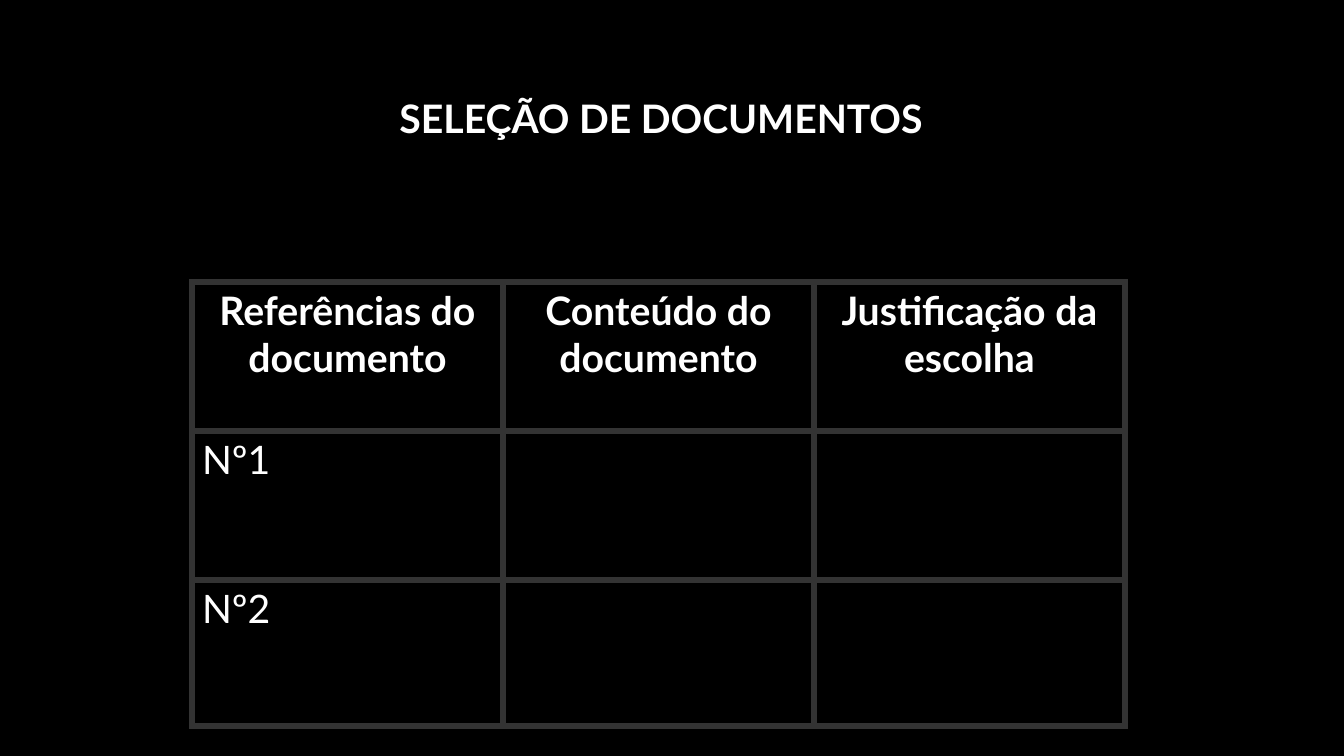
from dataclasses import dataclass

from lxml.etree import SubElement
from pptx import Presentation
from pptx.dml.color import RGBColor
from pptx.enum.text import MSO_ANCHOR, PP_ALIGN
from pptx.oxml.ns import qn
from pptx.util import Emu, Pt

TITLE = "SELEÇÃO DE DOCUMENTOS"
HEADERS = ["Referências do documento", "Conteúdo do documento", "Justificação da escolha"]
ROWS = [["Nº1", "", ""], ["Nº2", "", ""]]

SLIDE_SIZE = (1344, 756)
TITLE_BOX = (0, 85, 1322, 62)
TABLE_ORIGIN = (192, 282)
COLUMN_WIDTH = 311
ROW_HEIGHTS = [149, 149, 146]


@dataclass(frozen=True)
class Theme:
    background: str = "000000"
    text: str = "FFFFFF"
    border: str = "333333"
    border_width: float = 4.5
    font: str = "Lato"
    size: int = 28


THEME = Theme()


def px(n):
    return Emu(round(n * 914400 / 100.8))


def write(p, text, bold, align):
    p.alignment = align
    r = p.add_run()
    r.text = text
    r.font.name = THEME.font
    r.font.size = Pt(THEME.size)
    r.font.bold = bold
    r.font.color.rgb = RGBColor.from_string(THEME.text)


def set_borders(cell):
    tc_pr = cell._tc.get_or_add_tcPr()
    for i, side in enumerate(("lnL", "lnR", "lnT", "lnB")):
        ln = SubElement(tc_pr, qn(f"a:{side}"), w=str(Pt(THEME.border_width)))
        fill = SubElement(ln, qn("a:solidFill"))
        SubElement(fill, qn("a:srgbClr"), val=THEME.border)
        tc_pr.remove(ln)
        tc_pr.insert(i, ln)


def add_title(s):
    title = s.shapes.title
    title.left, title.top, title.width, title.height = map(px, TITLE_BOX)
    tf = title.text_frame
    tf.word_wrap = True
    tf.vertical_anchor = MSO_ANCHOR.BOTTOM
    p = tf.paragraphs[0]
    p.line_spacing = 0.9
    write(p, TITLE, True, PP_ALIGN.CENTER)


def add_documents_table(s):
    grid = [HEADERS, *ROWS]
    width, height = COLUMN_WIDTH * len(HEADERS), sum(ROW_HEIGHTS)
    box = map(px, (*TABLE_ORIGIN, width, height))
    table = s.shapes.add_table(len(grid), len(HEADERS), *box).table
    table.horz_banding = False
    for column in table.columns:
        column.width = px(COLUMN_WIDTH)
    for i, (texts, row_height) in enumerate(zip(grid, ROW_HEIGHTS)):
        table.rows[i].height = px(row_height)
        is_header = i == 0
        for j, text in enumerate(texts):
            cell = table.cell(i, j)
            cell.fill.solid()
            cell.fill.fore_color.rgb = RGBColor.from_string(THEME.background)
            set_borders(cell)
            if text:
                align = PP_ALIGN.CENTER if is_header else PP_ALIGN.LEFT
                write(cell.text_frame.paragraphs[0], text, is_header, align)


def main():
    prs = Presentation()
    prs.slide_width, prs.slide_height = map(px, SLIDE_SIZE)
    s = prs.slides.add_slide(prs.slide_layouts[5])
    s.background.fill.solid()
    s.background.fill.fore_color.rgb = RGBColor.from_string(THEME.background)
    add_title(s)
    add_documents_table(s)
    prs.save("out.pptx")


if __name__ == "__main__":
    main()
